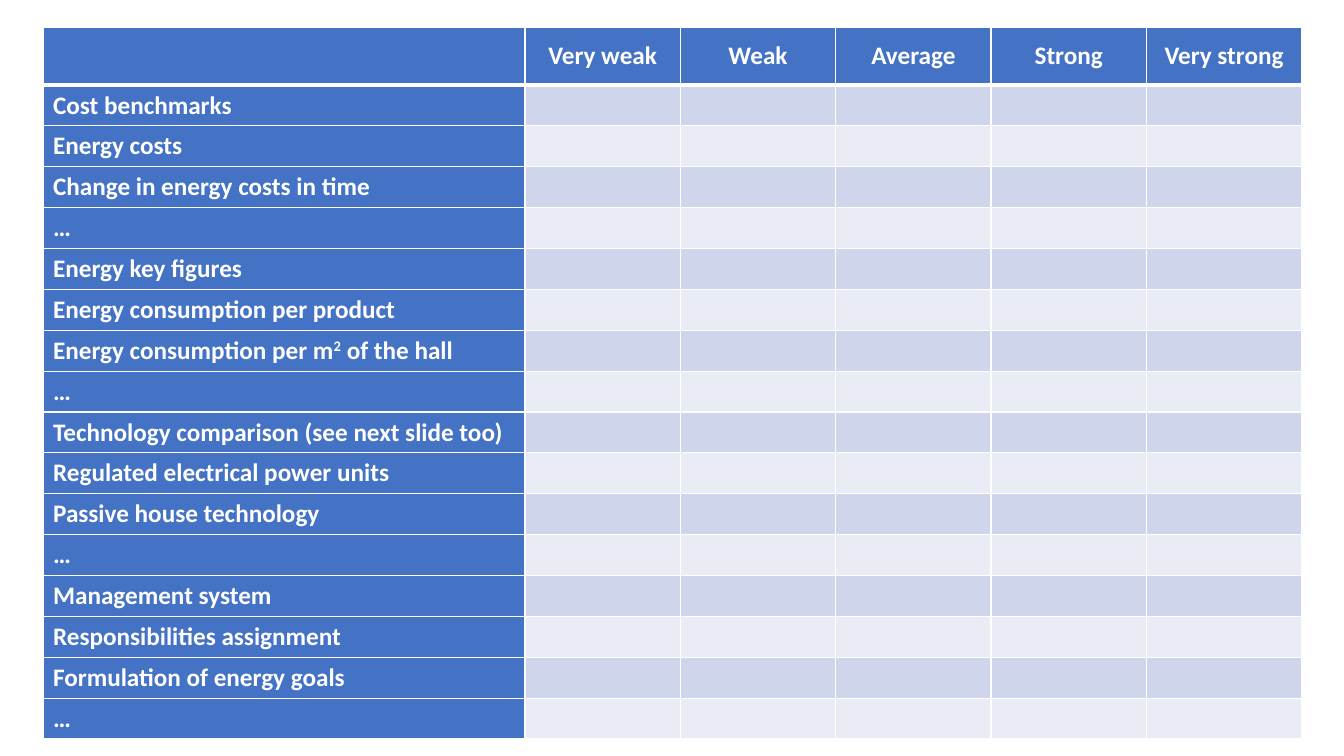
import pptx
import pptx.util
import pptx.dml.color
import pptx.enum.text
import pptx.oxml
import pptx.oxml.ns

PX = 914400 / 100.8
BLUE, WHITE = "4472C4", "FFFFFF"
BANDS = ("CFD5EA", "E9EBF5")
GRADES = ["Very weak", "Weak", "Average", "Strong", "Very strong"]
TOPICS = [
    ["Cost benchmarks"],
    ["Energy costs"],
    ["Change in energy costs in time"],
    ["…"],
    ["Energy key figures"],
    ["Energy consumption per product"],
    ["Energy consumption per m", "2", " of the hall"],
    ["…"],
    ["Technology comparison (see next slide too)"],
    ["Regulated electrical power units"],
    ["Passive house technology"],
    ["…"],
    ["Management system"],
    ["Responsibilities assignment"],
    ["Formulation of energy goals"],
    ["…"],
]


def px(size):
    return pptx.util.Emu(round(size * PX))


def color(code):
    return pptx.dml.color.RGBColor.from_string(code)


def write(frame, parts, size=18, font="Calibri", ink=WHITE, bold=True,
          align=pptx.enum.text.PP_ALIGN.LEFT, gap=0):
    para = frame.paragraphs[0]
    para.alignment = align
    para.space_before = para.space_after = pptx.util.Pt(gap)
    para.font.size = pptx.util.Pt(size)
    for index, part in enumerate(parts):
        run = para.add_run()
        run.text = part
        run.font.size = pptx.util.Pt(size)
        run.font.name = font
        run.font.bold = bold
        run.font.color.rgb = color(ink)
        if index == 1:
            run._r.get_or_add_rPr().set("baseline", "30000")


def edge(cell, top=1, bottom=1):
    space = pptx.oxml.ns.nsdecls("a")
    props = cell._tc.get_or_add_tcPr()
    for side, width in (("L", 1), ("R", 1), ("T", top), ("B", bottom)):
        props.append(pptx.oxml.parse_xml(
            f'<a:ln{side} {space} w="{pptx.util.Pt(width)}"><a:solidFill>'
            f'<a:srgbClr val="{WHITE}"/></a:solidFill></a:ln{side}>'))


def paint(cell, code):
    cell.fill.solid()
    cell.fill.fore_color.rgb = color(code)


def matrix(slide, left, top, width, height, first=482, head=58):
    rows, cols = len(TOPICS) + 1, len(GRADES) + 1
    box = map(px, (left, top, width, height))
    table = slide.shapes.add_table(rows, cols, *box).table
    for col in range(cols):
        table.columns[col].width = px(
            (width - first) / len(GRADES) if col else first)
    for row in range(rows):
        table.rows[row].height = px(
            (height - head) / len(TOPICS) if row else head)
        for col in range(cols):
            cell = table.cell(row, col)
            edge(cell, top=3 if row == 1 else 1, bottom=1 if row else 3)
            paint(cell, BANDS[(row - 1) % 2] if row and col else BLUE)
            if row:
                write(cell.text_frame, [] if col else TOPICS[row - 1])
            elif col:
                cell.vertical_anchor = pptx.enum.text.MSO_ANCHOR.MIDDLE
                write(cell.text_frame, [GRADES[col - 1]], gap=6,
                      align=pptx.enum.text.PP_ALIGN.CENTER)


def main():
    deck = pptx.Presentation()
    deck.slide_width, deck.slide_height = px(1344), px(756)
    slide = deck.slides.add_slide(deck.slide_layouts[6])
    matrix(slide, 43, 27, 1259, 698)
    deck.save("out.pptx")


if __name__ == "__main__":
    main()
